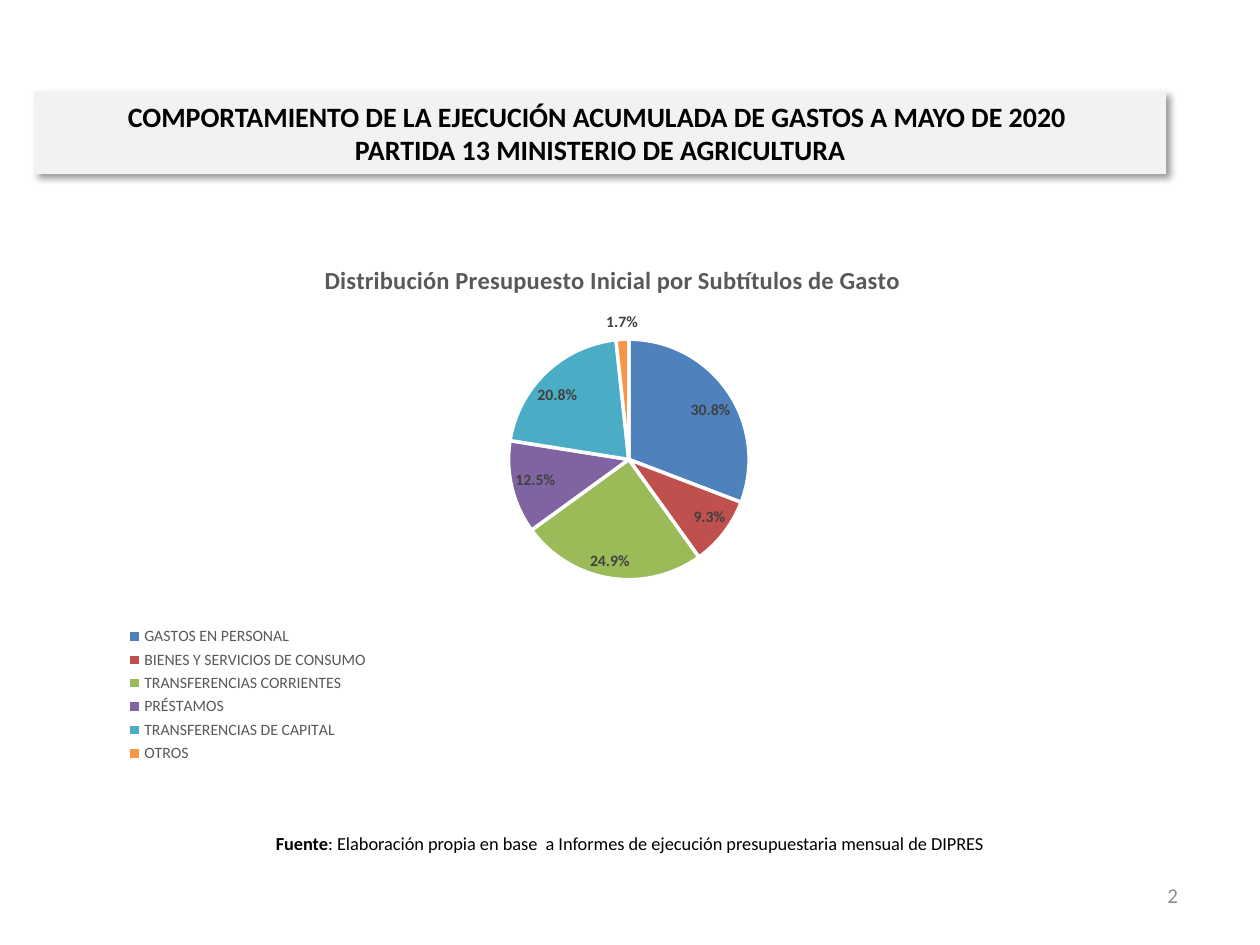
from lxml.etree import SubElement
from pptx import Presentation
from pptx.chart.data import CategoryChartData
from pptx.dml.color import RGBColor
from pptx.enum.chart import XL_CHART_TYPE as ChartType
from pptx.enum.chart import XL_LABEL_POSITION as LabelPosition
from pptx.enum.chart import XL_LEGEND_POSITION as LegendPosition
from pptx.enum.shapes import MSO_SHAPE as Shape
from pptx.enum.text import MSO_ANCHOR as Anchor
from pptx.enum.text import PP_ALIGN as Align
from pptx.oxml import parse_xml
from pptx.oxml.ns import nsdecls, qn
from pptx.util import Cm, Pt

BLACK = RGBColor(0x00, 0x00, 0x00)
WHITE = RGBColor(0xFF, 0xFF, 0xFF)
BANNER_GRAY = RGBColor(0xF2, 0xF2, 0xF2)
NUMBER_GRAY = RGBColor(0x8C, 0x8C, 0x8C)
TEXT_GRAY = RGBColor(0x59, 0x59, 0x59)
LABEL_GRAY = RGBColor(0x40, 0x40, 0x40)

SLICES = [
    ("GASTOS EN PERSONAL", 30.8, RGBColor(0x4F, 0x81, 0xBD)),
    ("BIENES Y SERVICIOS DE CONSUMO", 9.3, RGBColor(0xC0, 0x50, 0x4D)),
    ("TRANSFERENCIAS CORRIENTES", 24.9, RGBColor(0x9B, 0xBB, 0x59)),
    ("PRÉSTAMOS", 12.5, RGBColor(0x80, 0x64, 0xA2)),
    ("TRANSFERENCIAS DE CAPITAL", 20.8, RGBColor(0x4B, 0xAC, 0xC6)),
    ("OTROS", 1.7, RGBColor(0xF7, 0x96, 0x46)),
]


def style_font(font, size, color, bold=False):
    font.name = "Calibri"
    font.size = Pt(size)
    font.bold = bold
    font.color.rgb = color


def place(part, previous=None, **fractions):
    """Fix a chart part's place, in fractions of the chart area."""
    for old in part.findall(qn("c:layout")):
        part.remove(old)
    layout = parse_xml(f'<c:layout {nsdecls("c")}/>')
    if previous:
        part.find(qn(previous)).addnext(layout)
    else:
        part.insert(0, layout)
    manual = SubElement(layout, qn("c:manualLayout"))
    if previous is None:  # the plot area, measured without its labels
        SubElement(manual, qn("c:layoutTarget")).set("val", "inner")
    for mode in ("xMode", "yMode"):
        SubElement(manual, qn(f"c:{mode}")).set("val", "edge")
    for key, fraction in fractions.items():
        SubElement(manual, qn(f"c:{key}")).set("val", str(fraction))


deck = Presentation()
deck.slide_width, deck.slide_height = Cm(25.4), Cm(19.05)
page = deck.slides.add_slide(deck.slide_layouts[6])

# Title banner with a soft shadow
banner = page.shapes.add_shape(Shape.RECTANGLE, Cm(0.7), Cm(1.85), Cm(22.8), Cm(1.65))
banner.fill.solid()
banner.fill.fore_color.rgb = BANNER_GRAY
banner.line.color.rgb = BANNER_GRAY
banner.line.width = Pt(0.75)
banner.shadow.inherit = False
effects = banner._element.spPr.find(qn("a:effectLst"))
effects.append(parse_xml(
    f'<a:outerShdw {nsdecls("a")} blurRad="50800" dist="38100" dir="2700000" '
    'algn="tl" rotWithShape="0"><a:prstClr val="black"><a:alpha val="40000"/>'
    '</a:prstClr></a:outerShdw>'))
banner.text_frame.word_wrap = True
banner.text_frame.vertical_anchor = Anchor.MIDDLE
para = banner.text_frame.paragraphs[0]
para.text = ("COMPORTAMIENTO DE LA EJECUCIÓN ACUMULADA DE GASTOS A MAYO DE 2020 \v"
             "PARTIDA 13 MINISTERIO DE AGRICULTURA")
para.alignment = Align.CENTER
for span in para.runs:
    style_font(span.font, 16, BLACK, bold=True)

# Pie chart
chart_data = CategoryChartData()
chart_data.categories = [name for name, _, _ in SLICES]
chart_data.add_series("Presupuesto Inicial", [value for _, value, _ in SLICES])
chart = page.shapes.add_chart(
    ChartType.PIE, Cm(1.07), Cm(4.65), Cm(22.43), Cm(11.28), chart_data).chart
style_font(chart.font, 10, BLACK)

chart.has_title = True
title = chart.chart_title
title.text_frame.text = "Distribución Presupuesto Inicial por Subtítulos de Gasto"
style_font(title.text_frame.paragraphs[0].runs[0].font, 14, TEXT_GRAY, bold=True)
place(title._element, "c:tx", x=0.24, y=0.05)

plot = chart.plots[0]
plot.vary_by_categories = True
place(chart._chartSpace.chart.plotArea, x=0.035, y=0.194, w=0.965, h=0.43)

series = plot.series[0]
for index, (_, _, color) in enumerate(SLICES):
    point_format = series.points[index].format
    point_format.fill.solid()
    point_format.fill.fore_color.rgb = color
    point_format.line.color.rgb = WHITE
    point_format.line.width = Pt(2)

labels = series.data_labels
labels.show_value = False
labels.show_percentage = True
labels.number_format = "0.0%"
labels.number_format_is_linked = False
labels.position = LabelPosition.BEST_FIT
style_font(labels.font, 9, LABEL_GRAY, bold=True)

# Legend, one entry a line at the lower left
chart.has_legend = True
legend = chart.legend
legend.position = LegendPosition.BOTTOM
legend.include_in_layout = False
style_font(legend.font, 9, TEXT_GRAY)
place(legend._element, "c:legendPos", x=0.05, y=0.7, w=0.25, h=0.26)

# Source note and page number
NOTES = [
    (1.93, 16.48, 21.54, Align.CENTER, 10.5, BLACK,
     [("Fuente", True),
      (": Elaboración propia en base  a Informes de ejecución presupuestaria "
       "mensual de DIPRES", False)]),
    (18.08, 17.53, 5.92, Align.RIGHT, 12, NUMBER_GRAY, [("2", False)]),
]
for left, top, width, align, size, color, spans in NOTES:
    box = page.shapes.add_textbox(Cm(left), Cm(top), Cm(width), Cm(1.02))
    box.text_frame.word_wrap = True
    box.text_frame.vertical_anchor = Anchor.MIDDLE
    para = box.text_frame.paragraphs[0]
    para.alignment = align
    for words, bold in spans:
        span = para.add_run()
        span.text = words
        style_font(span.font, size, color, bold)

deck.save("out.pptx")
